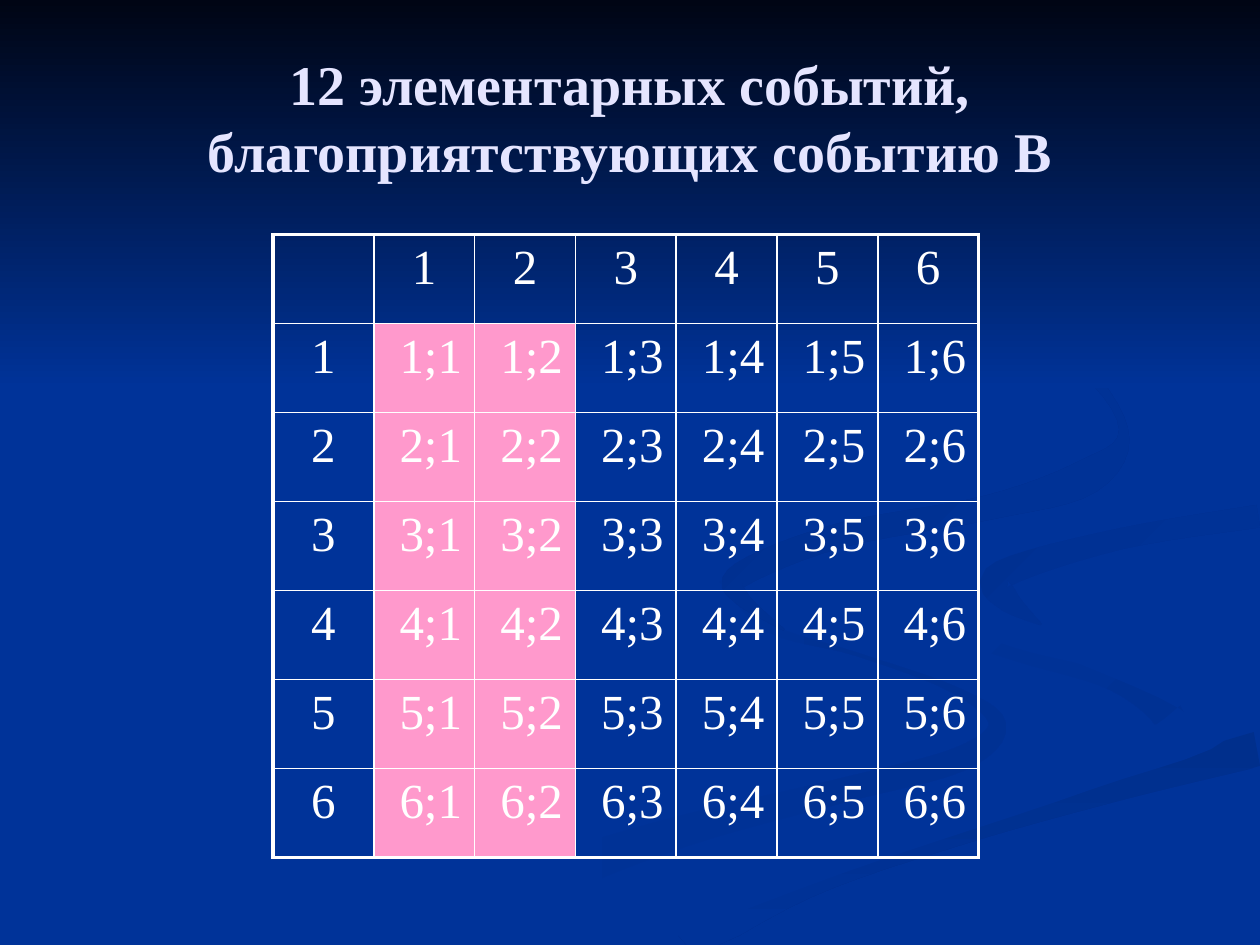
import math
import pptx
import pptx.util
import pptx.dml.color
import pptx.enum.shapes
import pptx.enum.text
import pptx.oxml
import pptx.oxml.ns

Pt = pptx.util.Pt
ALIGN = pptx.enum.text.PP_ALIGN
FONT = "Times New Roman"
WHITE, BLUE, PINK, LILAC, NIGHT = "FFFFFF", "003399", "FF99CC", "E5E5FF", "000514"
WIDE, HIGH = 720, 540
SIDES = 6
LUCKY = (1, 2)
STEPS = 6

# Each knot of a ribbon is (x, y, thickness).
LOOP = [(412, 332, 2), (440, 359, 5), (490, 374, 2), (545, 394, 4), (570, 414, 10),
        (548, 434, 14), (480, 452, 14), (390, 475, 18), (310, 503, 26), (238, 539, 40)]
BEND = [(521, 334, 1), (540, 358, 8), (580, 374, 7), (637, 390, 10),
        (669, 412, 18), (650, 433, 2)]
TAIL = [(719, 428, 20), (637, 450, 16), (546, 475, 17), (460, 505, 17), (386, 539, 30)]
ROAD = [(719, 284, 10), (610, 302, 11), (548, 322, 24), (552, 347, 26), (620, 371, 18),
        (695, 402, 36), (620, 445, 14), (480, 490, 18), (352, 539, 18)]
HOOK = [(719, 295, 13), (640, 308, 12), (573, 328, 16), (575, 342, 14), (595, 357, 1)]
CURL = [(549, 168, 1), (612, 204, 6), (642, 245, 5), (622, 272, 20), (565, 290, 14),
        (480, 306, 14), (424, 328, 14), (423, 341, 9), (448, 360, 1)]
RIBBONS = [
    (LOOP, BLUE, "003193", 0), (BEND, BLUE, "003193", 45),
    (TAIL, "002F8C", BLUE, 90), (ROAD, BLUE, BLUE, 0),
    (HOOK, "003091", BLUE, 45), (CURL, "002F8E", BLUE, 45)]


def color(code):
    return pptx.dml.color.RGBColor.from_string(code)


def paint(fill, code):
    fill.solid()
    fill.fore_color.rgb = color(code)


def shade(shape, first, last, angle):
    shape.shadow.inherit = False
    shape.line.fill.background()
    shape.fill.gradient()
    shape.fill.gradient_angle = -angle % 360
    for stop, code in zip(shape.fill.gradient_stops, (first, last)):
        stop.color.rgb = color(code)


def blend(a, b, c, d, t):
    return (2 * b + (c - a) * t + (2 * a - 5 * b + 4 * c - d) * t ** 2
            + (3 * b - a - 3 * c + d) * t ** 3) / 2


def smooth(knots):
    ends = [knots[0], *knots, knots[-1]]
    spine = []
    for four in zip(ends, ends[1:], ends[2:], ends[3:]):
        for step in range(STEPS):
            spine.append([blend(*axis, step / STEPS) for axis in zip(*four)])
    return spine + [knots[-1]]


def outline(knots):
    spine = smooth(knots)
    left, right = [], []
    for spot, (x, y, thick) in enumerate(spine):
        back, ahead = spine[max(spot - 1, 0)], spine[min(spot + 1, len(spine) - 1)]
        turn = math.atan2(ahead[1] - back[1], ahead[0] - back[0])
        over, down = -math.sin(turn) * thick / 2, math.cos(turn) * thick / 2
        left.append((x + over, y + down))
        right.append((x - over, y - down))
    return [(Pt(min(x, WIDE)), Pt(min(y, HIGH))) for x, y in left + right[::-1]]


def add_ribbon(slide, knots, first, last, angle):
    start, *rest = outline(knots)
    maker = slide.shapes.build_freeform(*start)
    maker.add_line_segments(rest, close=True)
    shade(maker.convert_to_shape(), first, last, angle)


def add_band(slide):
    kind = pptx.enum.shapes.MSO_SHAPE.RECTANGLE
    band = slide.shapes.add_shape(kind, 0, 0, Pt(WIDE), Pt(222))
    shade(band, NIGHT, BLUE, 90)


def write(frame, text, size, code, align, bold=False):
    frame.text = text
    para = frame.paragraphs[0]
    para.alignment = align
    for run in para.runs:
        run.font.name = FONT
        run.font.size = Pt(size)
        run.font.bold = bold
        run.font.color.rgb = color(code)


def add_title(slide, text):
    frame = slide.shapes.add_textbox(Pt(36), Pt(21.6), Pt(648), Pt(90)).text_frame
    frame.word_wrap = True
    frame.vertical_anchor = pptx.enum.text.MSO_ANCHOR.MIDDLE
    write(frame, text, 32, LILAC, ALIGN.CENTER, True)


def border(cell, row, col):
    outer = {"L": col == 0, "R": col == SIDES, "T": row == 0, "B": row == SIDES}
    props = cell._tc.get_or_add_tcPr()
    for spot, (side, thick) in enumerate(outer.items()):
        width = Pt(2.25 if thick else 1)
        props.insert(spot, pptx.oxml.parse_xml(
            f'<a:ln{side} {pptx.oxml.ns.nsdecls("a")} w="{width}"><a:solidFill>'
            f'<a:srgbClr val="{WHITE}"/></a:solidFill></a:ln{side}>'))


def fill_cell(cell, row, col):
    if row and col:
        write(cell.text_frame, f"{row};{col}", 28, WHITE, ALIGN.RIGHT)
    elif row or col:
        write(cell.text_frame, str(row or col), 28, WHITE, ALIGN.CENTER)
    if row and col in LUCKY:
        paint(cell.fill, PINK)
    else:
        cell.fill.background()
    border(cell, row, col)


def add_grid(slide):
    count, wide, high = SIDES + 1, 57.6, 50.9
    grid = slide.shapes.add_table(
        count, count, Pt(156), Pt(134), Pt(count * wide), Pt(count * high)).table
    grid.first_row = grid.horz_banding = False
    for column in grid.columns:
        column.width = Pt(wide)
    for row, line in enumerate(grid.rows):
        line.height = Pt(high)
        for col, cell in enumerate(line.cells):
            fill_cell(cell, row, col)


def main():
    deck = pptx.Presentation()
    deck.slide_width, deck.slide_height = Pt(WIDE), Pt(HIGH)
    slide = deck.slides.add_slide(deck.slide_layouts[6])
    paint(slide.background.fill, BLUE)
    for ribbon in RIBBONS:
        add_ribbon(slide, *ribbon)
    add_band(slide)
    add_title(slide, "12 элементарных событий, благоприятствующих событию В")
    add_grid(slide)
    deck.save("out.pptx")


if __name__ == "__main__":
    main()
